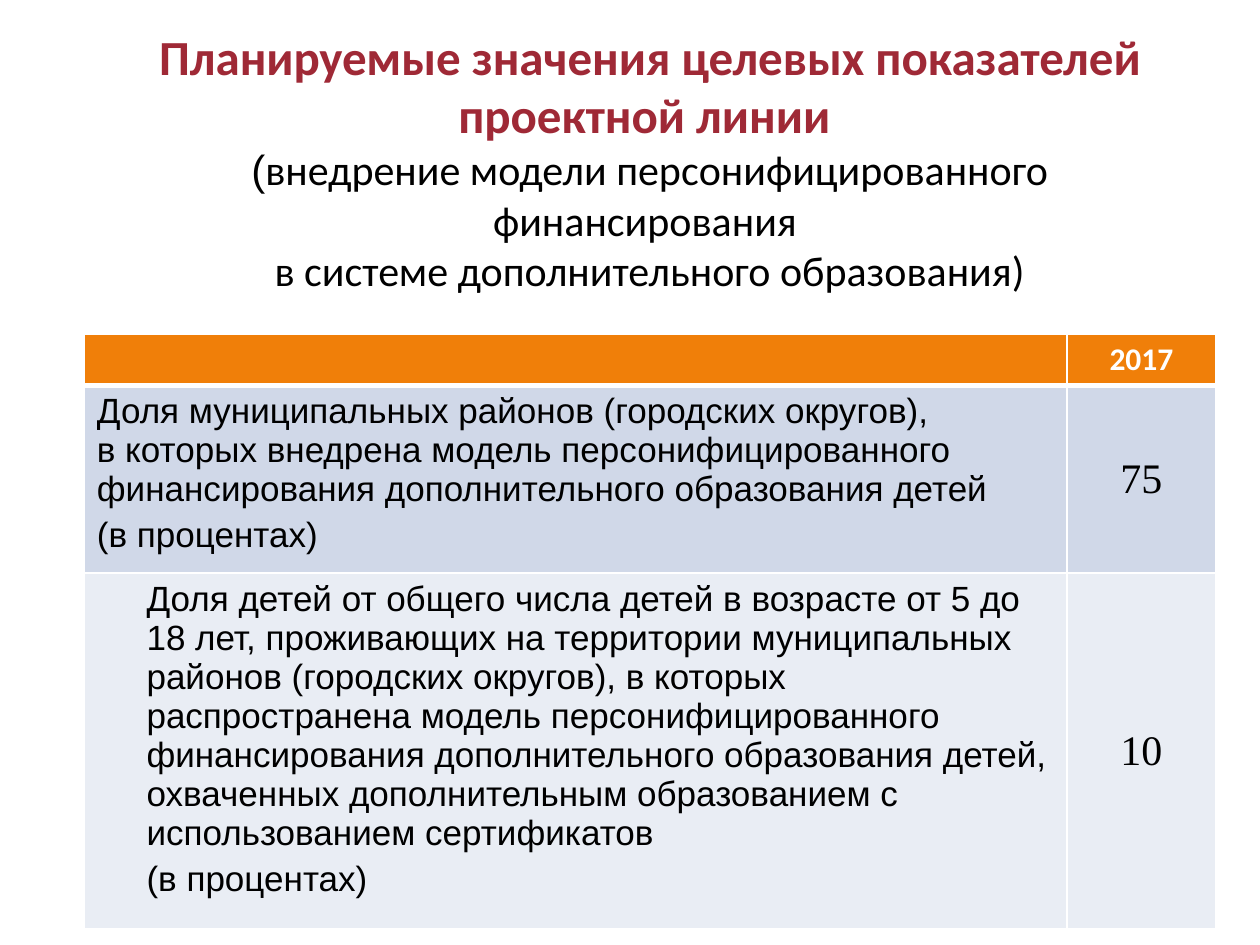
"""Build a slide with the planned target values of the project line."""
from lxml import etree
from pptx import Presentation
from pptx.dml.color import RGBColor as RGB
from pptx.enum.text import MSO_ANCHOR as Anchor, PP_ALIGN as Align
from pptx.oxml.ns import qn
from pptx.util import Cm, Pt

RED = RGB(0x9F, 0x29, 0x36)
ORANGE = RGB(0xF0, 0x7F, 0x09)
BLUE = RGB(0xD0, 0xD8, 0xE8)
PALE = RGB(0xE9, 0xED, 0xF4)
WHITE = RGB(0xFF, 0xFF, 0xFF)
BLACK = RGB(0, 0, 0)


def set_font(font, name, size, color, bold=False):
    font.name, font.size, font.bold = name, Pt(size), bold
    font.color.rgb = color


def add_border(cell, side, width):
    ln = etree.SubElement(cell._tc.get_or_add_tcPr(), qn(f"a:ln{side}"), w=str(Pt(width)))
    fill = etree.SubElement(ln, qn("a:solidFill"))
    etree.SubElement(fill, qn("a:srgbClr"), val=str(WHITE))


prs = Presentation()
prs.slide_width, prs.slide_height = Cm(25.4), Cm(19.05)
s = prs.slides.add_slide(prs.slide_layouts[6])

tf = s.shapes.add_textbox(Cm(2.7), Cm(0.53), Cm(20.8), Cm(5.41)).text_frame
tf.word_wrap = True
tf.vertical_anchor = Anchor.MIDDLE
p = tf.paragraphs[0]
p.alignment = Align.CENTER
title = [
    ("Планируемые значения целевых показателей проектной линии ", "Calibri", 28, RED, True),
    ("(", "Arial", 24, BLACK, False),
    ("внедрение модели персонифицированного финансирования ", "Calibri", 24, BLACK, False),
    ("в системе дополнительного образования)", "Calibri", 24, BLACK, False),
]
for i, (text, *style) in enumerate(title):
    if i in (1, 3):
        p.add_line_break()
        set_font(p.runs[-1].font, *title[i - 1][1:])
    r = p.add_run()
    r.text = text
    set_font(r.font, *style)

rows = [
    ("", "2017", 1.04, ORANGE, 0),
    ("Доля муниципальных районов (городских округов), \v"
     "в которых внедрена модель персонифицированного финансирования "
     "дополнительного образования детей\n(в процентах)", "75", 3.5, BLUE, 0),
    ("Доля детей от общего числа детей в возрасте от 5 до 18 лет, "
     "проживающих на территории муниципальных районов (городских округов), "
     "в которых распространена модель персонифицированного финансирования "
     "дополнительного образования детей, охваченных дополнительным образованием "
     "с использованием сертификатов\n(в процентах)", "10", 6.68, PALE, 1),
]
table = s.shapes.add_table(3, 2, Cm(1.7), Cm(6.73), Cm(22.81), Cm(11.22)).table
table.columns[0].width, table.columns[1].width = Cm(19.81), Cm(3)

for i, (label, value, height, color, indent) in enumerate(rows):
    table.rows[i].height = Cm(height)
    for j, text in enumerate((label, value)):
        cell = table.cell(i, j)
        cell.text = text
        for side in "LRTB":
            thick = (i, side) in ((0, "B"), (1, "T"))
            add_border(cell, side, 3 if thick else 1)
        cell.fill.solid()
        cell.fill.fore_color.rgb = color
        if i and j:
            cell.vertical_anchor = Anchor.MIDDLE
        for k, p in enumerate(cell.text_frame.paragraphs):
            if i == 0:
                set_font(p.font, "Calibri", 18, WHITE, True)
            elif j:
                set_font(p.font, "Times New Roman", 24, BLACK)
            else:
                set_font(p.font, "Arial", 20, BLACK)
                p._p.get_or_add_pPr().set("marL", str(Cm(indent)))
            if j:
                p.alignment = Align.CENTER
            if k:
                p.space_before = Pt(4)

prs.save("out.pptx")
